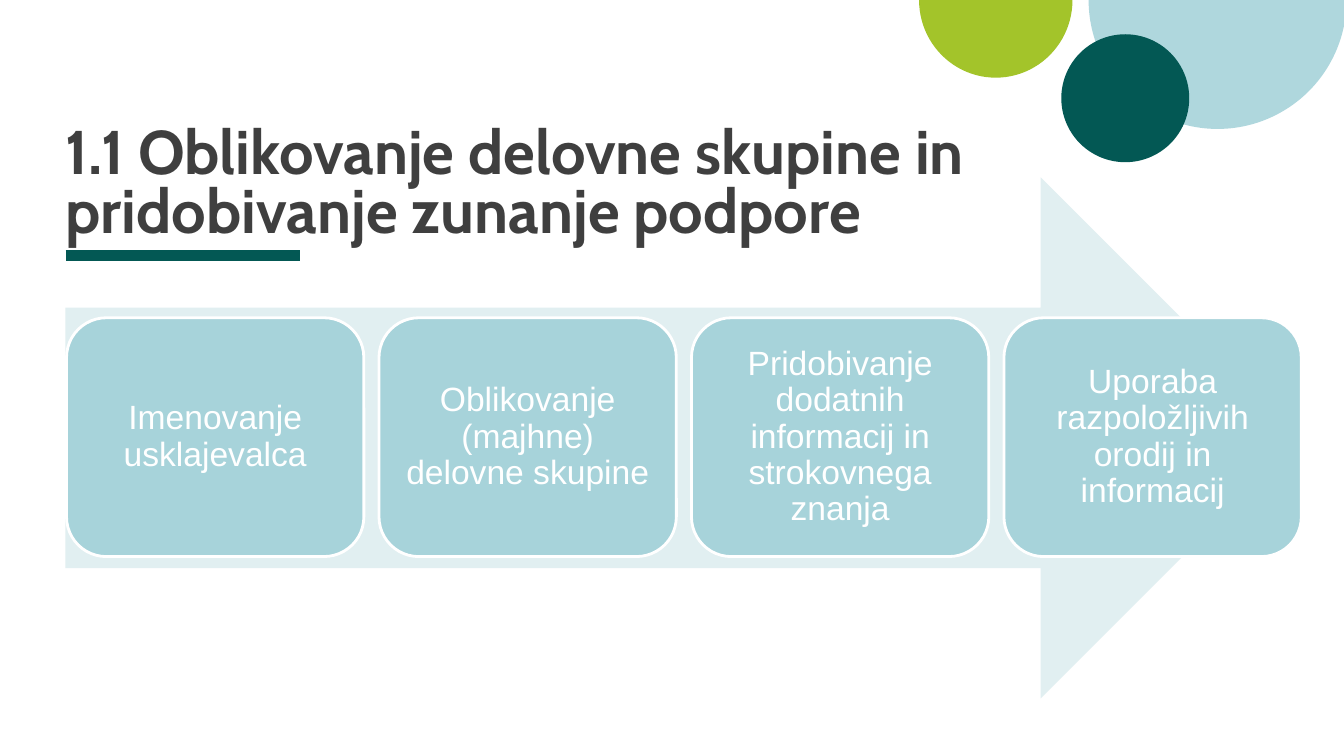
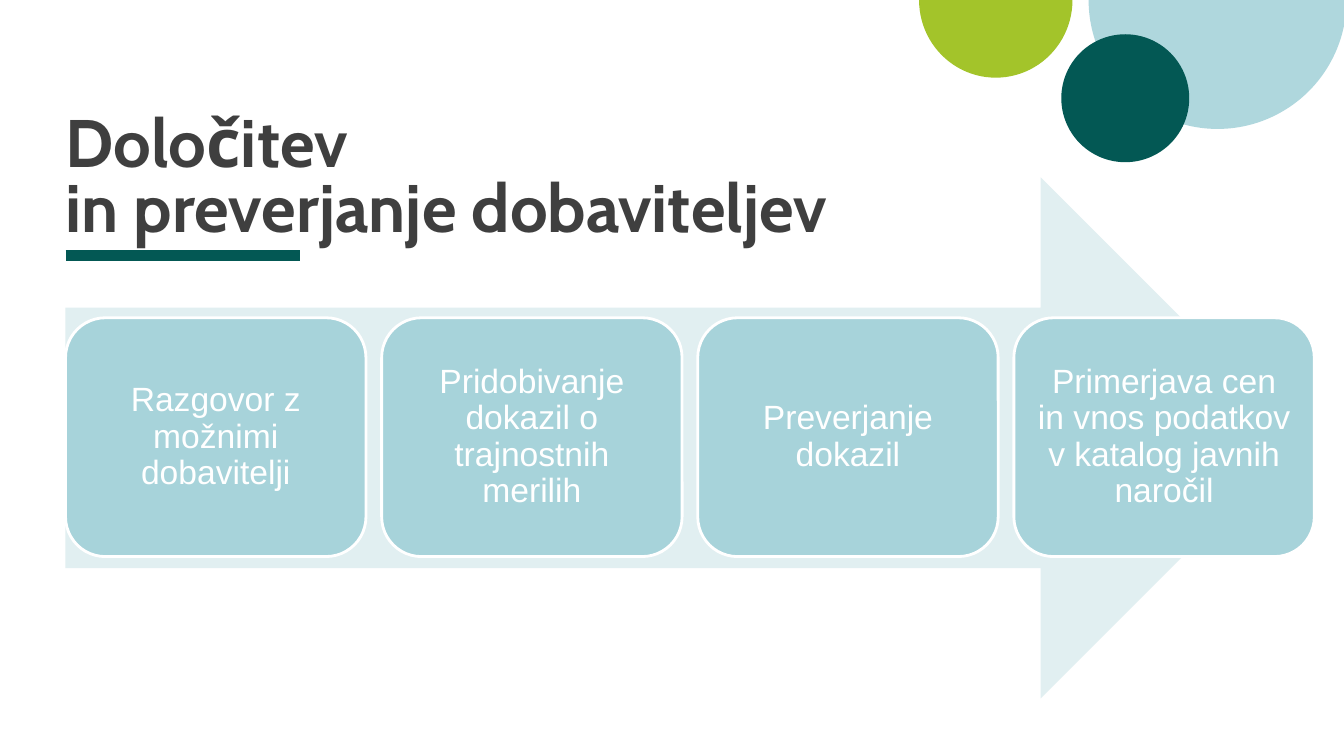
"""Build two process slides that share circles, a title rule and a wide arrow."""
from dataclasses import dataclass

import pptx
import pptx.dml.color
import pptx.enum.shapes
import pptx.enum.text
import pptx.oxml
import pptx.oxml.ns
import pptx.shapes.autoshape
import pptx.slide
import pptx.util

Pt = pptx.util.Pt
MSO_SHAPE = pptx.enum.shapes.MSO_SHAPE
ANCHOR = pptx.enum.text.MSO_ANCHOR
ALIGN = pptx.enum.text.PP_ALIGN

COLORS = {
    "sky": "AFD7DD",
    "lime": "A3C42A",
    "teal": "035854",
    "arrow": "E1EFF1",
    "card": "A7D3DA",
    "white": "FFFFFF",
    "title": "3F3F3F",
}
MARGIN = 46.8
CARD_TOP = 227
CARD_HEIGHT = 170.6
CARD_INSET = 8.3


@dataclass(frozen=True)
class Box:
    left: float
    top: float
    width: float
    height: float


@dataclass(frozen=True)
class Circle:
    shape: MSO_SHAPE
    box: Box
    color: str


@dataclass(frozen=True)
class Process:
    title: str
    title_size: float
    left: float
    card_width: float
    pitch: float
    steps: tuple[str, ...]


CIRCLES = (
    Circle(MSO_SHAPE.PIE, Box(777.6, -92.2, 184.3, 184.3), "sky"),
    Circle(MSO_SHAPE.PIE, Box(656.5, -55.4, 109.6, 110.9), "lime"),
    Circle(MSO_SHAPE.OVAL, Box(758.1, 24.5, 91.4, 91.4), "teal"),
)
ARROW = Box(MARGIN, 126.7, 882.7, 372.2)
TITLE = Box(MARGIN, 132.5, 870.5, 42.5)

PROCESSES = (
    Process(
        "1.1 Oblikovanje delovne skupine in pridobivanje zunanje podpore",
        44, 47.5, 212.4, 223.2,
        (
            "Imenovanje usklajevalca",
            "Oblikovanje (majhne) delovne skupine",
            "Pridobivanje dodatnih informacij in strokovnega znanja",
            "Uporaba razpoložljivih orodij in informacij",
        ),
    ),
    Process(
        "Določitev\vin preverjanje dobaviteljev",
        48, MARGIN, 214.6, 225.8,
        (
            "Razgovor z možnimi dobavitelji",
            "Pridobivanje dokazil o trajnostnih merilih",
            "Preverjanje dokazil",
            "Primerjava cen in vnos podatkov v katalog javnih naročil",
        ),
    ),
)


def rgb(name: str) -> pptx.dml.color.RGBColor:
    return pptx.dml.color.RGBColor.from_string(COLORS[name])


def lengths(box: Box) -> tuple[pptx.util.Length, ...]:
    return Pt(box.left), Pt(box.top), Pt(box.width), Pt(box.height)


def add_shape(
    s: pptx.slide.Slide, kind: MSO_SHAPE, box: Box, color: str
) -> pptx.shapes.autoshape.Shape:
    sp = s.shapes.add_shape(kind, *lengths(box))
    sp.shadow.inherit = False
    sp.fill.solid()
    sp.fill.fore_color.rgb = rgb(color)
    sp.line.fill.background()
    return sp


def set_text(
    sp: pptx.shapes.autoshape.Shape, text: str, font: str, size: float, color: str,
    bold: bool, spacing: float, align: ALIGN, anchor: ANCHOR, inset: float,
) -> None:
    tf = sp.text_frame
    tf.word_wrap = True
    tf.vertical_anchor = anchor
    tf.margin_left = tf.margin_right = tf.margin_top = tf.margin_bottom = Pt(inset)
    p = tf.paragraphs[0]
    p.text = text
    p.alignment = align
    p.line_spacing = spacing
    for r in p.runs:
        r.font.name = font
        r.font.size = Pt(size)
        r.font.bold = bold
        r.font.color.rgb = rgb(color)


def add_decoration(s: pptx.slide.Slide) -> None:
    for circle in CIRCLES:
        sp = add_shape(s, circle.shape, circle.box, circle.color)
        if circle.shape == MSO_SHAPE.PIE:
            sp.adjustments[0] = 0
            sp.adjustments[1] = 108
    rule = s.shapes.add_connector(
        pptx.enum.shapes.MSO_CONNECTOR.STRAIGHT,
        Pt(MARGIN), Pt(182.3), Pt(214.4), Pt(182.3),
    )
    rule.line.color.rgb = rgb("teal")
    rule.line.width = Pt(8)
    effects = pptx.oxml.parse_xml(f"<a:effectLst {pptx.oxml.ns.nsdecls('a')}/>")
    rule._element.spPr.append(effects)


def add_card(s: pptx.slide.Slide, box: Box, text: str) -> None:
    sp = add_shape(s, MSO_SHAPE.ROUNDED_RECTANGLE, box, "card")
    sp.line.color.rgb = rgb("white")
    sp.line.width = Pt(2)
    set_text(sp, text, "Arial", 24, "white", False, 0.9,
             ALIGN.CENTER, ANCHOR.MIDDLE, CARD_INSET)


def add_process(prs: pptx.presentation.Presentation, process: Process) -> None:
    s = prs.slides.add_slide(prs.slide_layouts[6])
    add_decoration(s)
    add_shape(s, MSO_SHAPE.RIGHT_ARROW, ARROW, "arrow")
    title = s.shapes.add_textbox(*lengths(TITLE))
    set_text(title, process.title, "Cabin", process.title_size, "title", True, 0.8,
             ALIGN.LEFT, ANCHOR.BOTTOM, 0)
    for i, step in enumerate(process.steps):
        left = process.left + i * process.pitch
        add_card(s, Box(left, CARD_TOP, process.card_width, CARD_HEIGHT), step)


def main() -> None:
    prs = pptx.Presentation()
    prs.slide_width, prs.slide_height = Pt(960), Pt(540)
    for process in PROCESSES:
        add_process(prs, process)
    prs.save("out.pptx")


if __name__ == "__main__":
    main()
